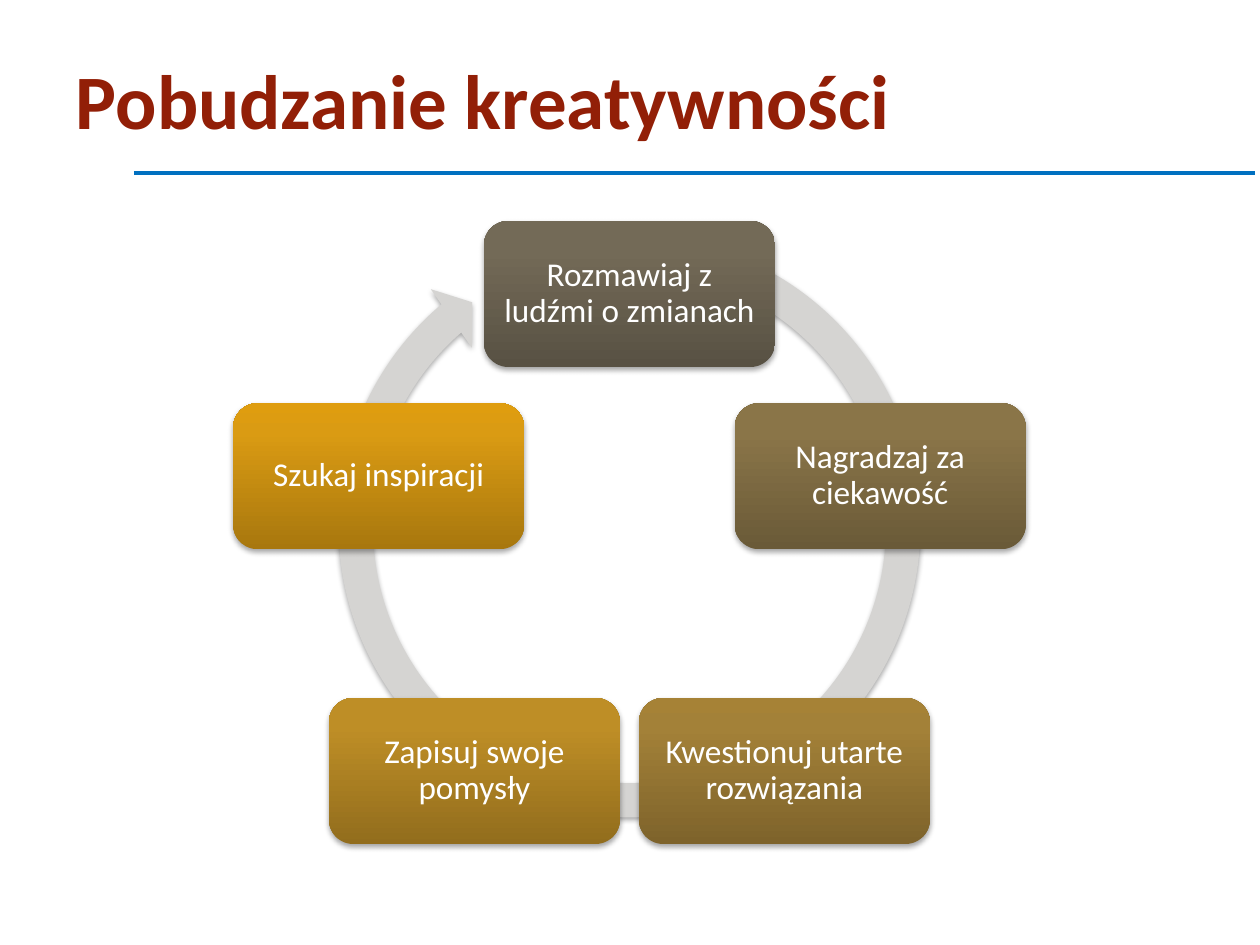
import math
from copy import deepcopy

from lxml import etree
from pptx import Presentation
from pptx.dml.color import RGBColor
from pptx.enum.shapes import MSO_CONNECTOR, MSO_SHAPE
from pptx.enum.text import MSO_ANCHOR, PP_ALIGN
from pptx.oxml.ns import qn
from pptx.util import Emu, Pt

ROUNDED = MSO_SHAPE.ROUNDED_RECTANGLE
CIRCULAR_ARROW = MSO_SHAPE.CIRCULAR_ARROW
STRAIGHT = MSO_CONNECTOR.STRAIGHT
MIDDLE = MSO_ANCHOR.MIDDLE
CENTER, LEFT = PP_ALIGN.CENTER, PP_ALIGN.LEFT

FONT = "Calibri"
RED = RGBColor(0x92, 0x1F, 0x07)
BLUE = RGBColor(0x00, 0x70, 0xC0)
GREY = RGBColor(0xD5, 0xD4, 0xD2)
WHITE = RGBColor(0xFF, 0xFF, 0xFF)

# Label, then the gradient colours from the bottom edge to the top edge
STEPS = [
    ("Rozmawiaj z ludźmi o zmianach", "585143", "736A57", "746A57"),
    ("Nagradzaj za ciekawość", "6A5A38", "8A7548", "8C7647"),
    ("Kwestionuj utarte rozwiązania", "7E632B", "A38138", "A68236"),
    ("Zapisuj swoje pomysły", "926D1D", "BE8E26", "C18F23"),
    ("Szukaj inspiracji", "A8770E", "DA9B13", "DF9D0F"),
]
STOPS = (0, 0.8, 1)
STEP_WIDTH, STEP_HEIGHT = 291, 146
RING_SIZE = 619
RING_ANGLES = (0.0554, 3.307, 137.653, 173.924, 0.0576)


def px(length):
    return Emu(round(length * 914400 / 126))


def write(shape, text, size, color, align, margins, bold=False):
    frame = shape.text_frame
    frame.word_wrap = True
    frame.vertical_anchor = MIDDLE
    frame.margin_left = frame.margin_right = px(margins[0])
    frame.margin_top = frame.margin_bottom = px(margins[1])
    para = frame.paragraphs[0]
    para.alignment = align
    span = para.add_run()
    span.text = text
    span.font.name = FONT
    span.font.size = Pt(size)
    span.font.bold = bold
    span.font.color.rgb = color
    return para


def add_soft_shadow(shape):
    shape.shadow.inherit = False
    effects = shape._element.spPr.find(qn("a:effectLst"))
    shadow = etree.SubElement(
        effects, qn("a:outerShdw"), blurRad=str(Pt(3.1)), dist=str(Pt(1.8)),
        dir="5400000", rotWithShape="0")
    color = etree.SubElement(shadow, qn("a:srgbClr"), val="000000")
    etree.SubElement(color, qn("a:alpha"), val="35000")


def fill_gradient(shape, colors):
    shape.fill.gradient()
    shape.fill.gradient_angle = 90
    stop_list = shape._element.spPr.find(".//" + qn("a:gsLst"))
    stop_list.append(deepcopy(stop_list[-1]))
    for stop, position, color in zip(shape.fill.gradient_stops, STOPS, colors):
        stop.position = position
        stop.color.rgb = RGBColor.from_string(color)


def add_heading(page, left, top, width, height):
    box = page.shapes.add_textbox(px(left), px(top), px(width), px(height))
    write(box, "Pobudzanie kreatywności", 44, RED, LEFT, (13, 6), bold=True)
    rule_y = px(top + 135)
    rule = page.shapes.add_connector(
        STRAIGHT, px(left + 71), rule_y, px(left + 1192), rule_y)
    rule.line.color.rgb = BLUE
    rule.line.width = Pt(2.25)
    etree.SubElement(rule._element.spPr, qn("a:effectLst"))


def add_step(page, center_x, center_y, label, colors):
    step = page.shapes.add_shape(
        ROUNDED, px(center_x - STEP_WIDTH / 2), px(center_y - STEP_HEIGHT / 2),
        px(STEP_WIDTH), px(STEP_HEIGHT))
    fill_gradient(step, colors)
    step.line.fill.background()
    add_soft_shadow(step)
    para = write(step, label, 19, WHITE, CENTER, (10, 10))
    para.line_spacing = 0.9


def add_cycle(page, left, top, width, height):
    """Steps evenly spaced clockwise from the top, over a circular arrow."""
    middle = left + width / 2
    ring = page.shapes.add_shape(
        CIRCULAR_ARROW, px(middle - RING_SIZE / 2), px(top - 4),
        px(RING_SIZE), px(RING_SIZE))
    for index, value in enumerate(RING_ANGLES):
        ring.adjustments[index] = value
    ring.fill.solid()
    ring.fill.fore_color.rgb = GREY
    ring.line.fill.background()
    add_soft_shadow(ring)

    turn = 2 * math.pi / len(STEPS)
    radius = (height - STEP_HEIGHT) / (1 + math.cos(turn / 2))
    center_y = top + STEP_HEIGHT / 2 + radius
    for index, (label, *colors) in enumerate(STEPS):
        add_step(page, middle + radius * math.sin(index * turn),
                 center_y - radius * math.cos(index * turn), label, colors)


def main():
    deck = Presentation()
    deck.slide_width, deck.slide_height = px(1260), px(945)
    page = deck.slides.add_slide(deck.slide_layouts[6])
    add_heading(page, 63, 38, 1134, 121)
    add_cycle(page, 233, 221, 793, 623)
    deck.save("out.pptx")


if __name__ == "__main__":
    main()
